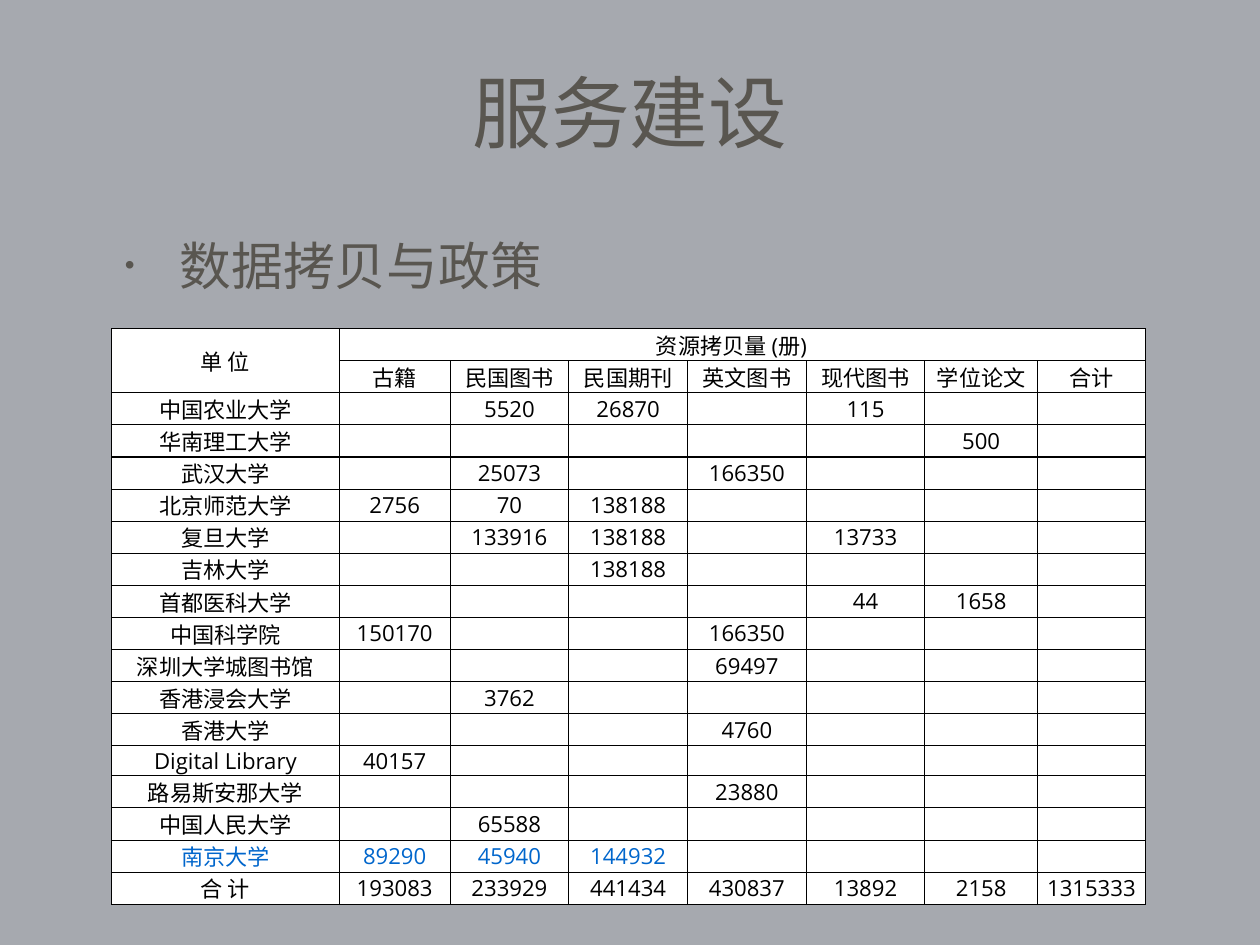
from lxml.etree import SubElement
from pptx import Presentation
from pptx.dml.color import RGBColor
from pptx.enum.text import MSO_ANCHOR as Anchor, MSO_AUTO_SIZE as AutoSize, PP_ALIGN as Align
from pptx.oxml.ns import qn
from pptx.util import Inches, Pt

COLORS = {
    "background": "A6A9AF",
    "heading": "595650",
    "shadow": "FFFFFF",
    "cell": "FFFFFF",
    "text": "000000",
    "highlight": "0066CC",
}
CJK_FONT = "Noto Sans CJK SC"
TABLE_FONT = "Open Sans"
COLUMN_WIDTHS = [2.57, 1.25, 1.34, 1.34, 1.34, 1.34, 1.27, 1.22]
ROW_HEIGHT = 0.31
HIGHLIGHTED_UNIT = "南京大学"
ROWS = [
    ["单 位", "资源拷贝量 (册)　", "", "", "", "", "", ""],
    ["", "古籍", "民国图书", "民国期刊", "英文图书", "现代图书", "学位论文", "合计"],
    ["中国农业大学", "", "5520", "26870", "", "115", "", ""],
    ["华南理工大学", "", "", "", "", "", "500", ""],
    ["武汉大学", "", "25073", "", "166350", "", "", ""],
    ["北京师范大学", "2756", "70", "138188", "", "", "", ""],
    ["复旦大学", "", "133916", "138188", "", "13733", "", ""],
    ["吉林大学", "", "", "138188", "", "", "", ""],
    ["首都医科大学", "", "", "", "", "44", "1658", ""],
    ["中国科学院", "150170", "", "", "166350", "", "", ""],
    ["深圳大学城图书馆", "", "", "", "69497", "", "", ""],
    ["香港浸会大学", "", "3762", "", "", "", "", ""],
    ["香港大学", "", "", "", "4760", "", "", ""],
    ["Digital Library", "40157", "", "", "", "", "", ""],
    ["路易斯安那大学", "", "", "", "23880", "", "", ""],
    ["中国人民大学", "", "65588", "", "", "", "", ""],
    [HIGHLIGHTED_UNIT, "89290", "45940", "144932", "", "", "", ""],
    ["合 计", "193083", "233929", "441434", "430837", "13892", "2158", "1315333"],
]


def color(name):
    """Return the named colour."""
    return RGBColor.from_string(COLORS[name])


def format_paragraph(paragraph, font_name, size, color_name):
    """Set the font, size and colour of a paragraph."""
    font = paragraph.font
    font.name = font_name
    font.size = Pt(size)
    font.color.rgb = color(color_name)
    properties = paragraph._p.get_or_add_pPr().find(qn("a:defRPr"))
    SubElement(properties, qn("a:ea"), typeface=CJK_FONT)


def add_text_shadow(paragraph):
    """Give every run of a paragraph a light shadow."""
    for run in paragraph.runs:
        effects = SubElement(run._r.get_or_add_rPr(), qn("a:effectLst"))
        shadow = SubElement(effects, qn("a:outerShdw"), dist="38100", dir="2700000")
        SubElement(shadow, qn("a:srgbClr"), val=COLORS["shadow"])


def add_bullet(paragraph):
    """Give a paragraph a small round bullet and a hanging indent."""
    properties = paragraph._p.get_or_add_pPr()
    properties.set("marL", str(Inches(0.97)))
    properties.set("indent", str(Inches(-0.62)))
    SubElement(properties, qn("a:buSzPct"), val="54000")
    SubElement(properties, qn("a:buFont"), typeface="Arial")
    SubElement(properties, qn("a:buChar"), char="•")


def set_heading_text(shape, text):
    """Write a heading into a shape and return its paragraph."""
    frame = shape.text_frame
    frame.text = text
    frame.word_wrap = True
    frame.auto_size = AutoSize.NONE
    frame.vertical_anchor = Anchor.MIDDLE
    frame.margin_left = frame.margin_right = Inches(0.06)
    frame.margin_top = frame.margin_bottom = Inches(0.06)
    paragraph = frame.paragraphs[0]
    add_text_shadow(paragraph)
    return paragraph


def set_title(slide, text):
    """Place and format the slide title."""
    title = slide.shapes.title
    title.left, title.top = Inches(0.83), Inches(0.42)
    title.width, title.height = Inches(12.56), Inches(1.67)
    paragraph = set_heading_text(title, text)
    paragraph.alignment = Align.CENTER
    format_paragraph(paragraph, "Times New Roman", 64, "heading")


def add_topic(slide, text):
    """Add the bulleted topic line."""
    box = slide.shapes.add_textbox(Inches(1), Inches(2.51), Inches(12.22), Inches(0.96))
    paragraph = set_heading_text(box, text)
    add_bullet(paragraph)
    format_paragraph(paragraph, CJK_FONT, 42, "heading")


def add_borders(cell):
    """Draw a thin line on each side of a cell."""
    properties = cell._tc.get_or_add_tcPr()
    for side in ("a:lnL", "a:lnR", "a:lnT", "a:lnB"):
        line = SubElement(properties, qn(side), w=str(Pt(1)))
        fill = SubElement(line, qn("a:solidFill"))
        SubElement(fill, qn("a:srgbClr"), val=COLORS["text"])


def format_cell(cell, text, color_name):
    """Fill in and format one table cell."""
    add_borders(cell)
    cell.fill.solid()
    cell.fill.fore_color.rgb = color("cell")
    cell.margin_left = cell.margin_right = cell.margin_top = cell.margin_bottom = 0
    cell.vertical_anchor = Anchor.MIDDLE
    cell.text = text
    paragraph = cell.text_frame.paragraphs[0]
    paragraph.alignment = Align.CENTER
    format_paragraph(paragraph, TABLE_FONT, 18, color_name)


def add_copy_table(slide):
    """Add the table of copied volumes by institution."""
    frame = slide.shapes.add_table(
        len(ROWS), len(COLUMN_WIDTHS), Inches(1.26), Inches(3.71),
        Inches(sum(COLUMN_WIDTHS)), Inches(ROW_HEIGHT * len(ROWS)))
    table = frame.table
    table.first_row = table.horz_banding = False
    for column, width in zip(table.columns, COLUMN_WIDTHS):
        column.width = Inches(width)
    for row, values in zip(table.rows, ROWS):
        row.height = Inches(ROW_HEIGHT)
        color_name = "highlight" if values[0] == HIGHLIGHTED_UNIT else "text"
        for cell, text in zip(row.cells, values):
            format_cell(cell, text, color_name)
    table.cell(0, 0).merge(table.cell(1, 0))
    table.cell(0, 1).merge(table.cell(0, len(COLUMN_WIDTHS) - 1))


def main():
    """Build and save the presentation."""
    presentation = Presentation()
    presentation.slide_width = Inches(14.22)
    presentation.slide_height = Inches(10.67)
    slide = presentation.slides.add_slide(presentation.slide_layouts[5])
    slide.background.fill.solid()
    slide.background.fill.fore_color.rgb = color("background")
    set_title(slide, "服务建设")
    add_topic(slide, "数据拷贝与政策")
    add_copy_table(slide)
    presentation.save("out.pptx")


if __name__ == "__main__":
    main()
